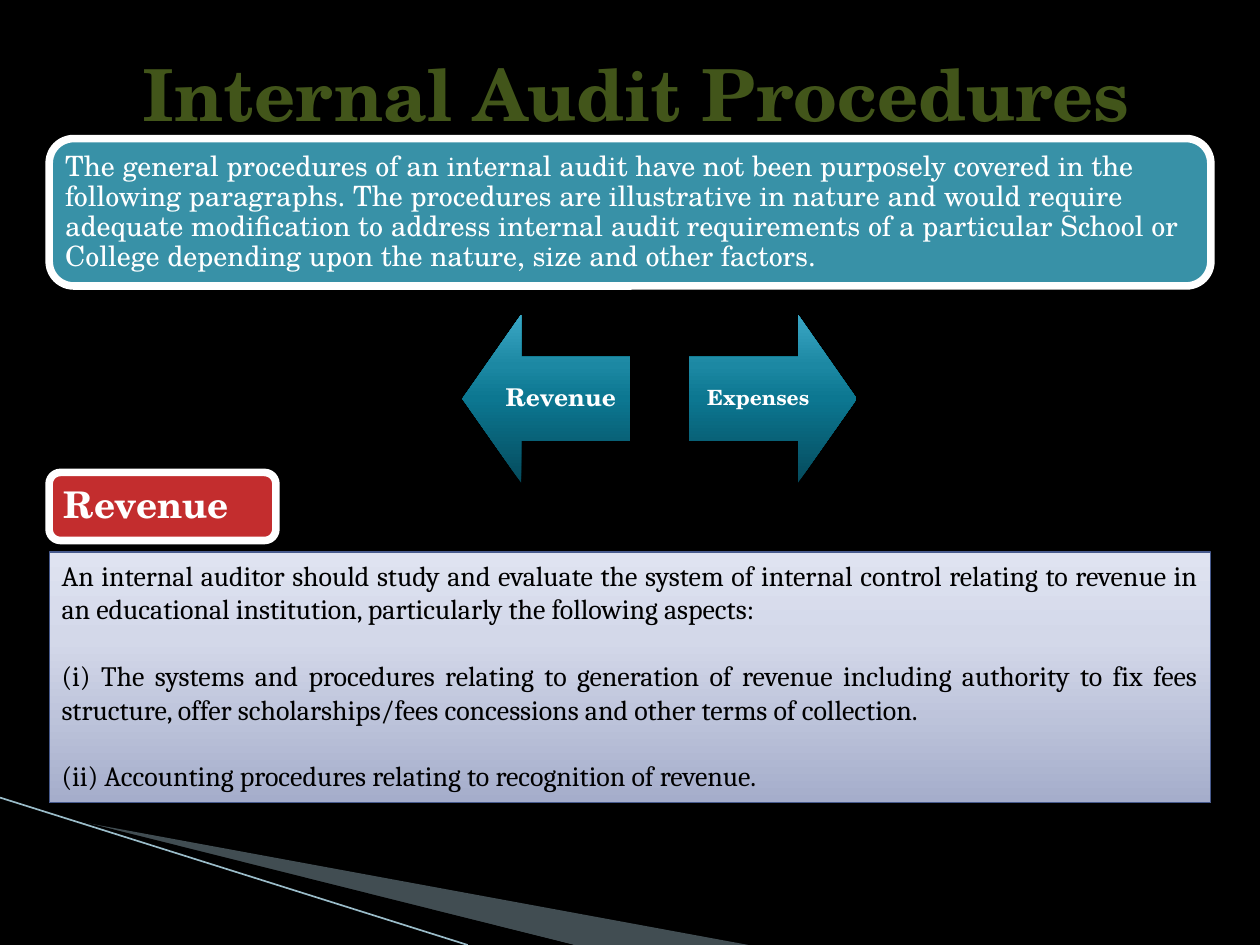
import copy
import pptx
import pptx.util
import pptx.dml.color
import pptx.enum.shapes
import pptx.enum.text
import pptx.oxml

HEX = {
    "back": "000000", "white": "FFFFFF", "title": "42551A", "teal": "3891A7",
    "red": "C32D2E", "edge": "475A8D", "wedge": "A3C2CE", "line": "9ABCC9",
}
BLUE = [(0, "054B5D"), (50, "0C7791"), (70, "1C88A3"), (100, "3AA6C5")]
PALE = [(0, "A5ADCB"), (65, "D3D8E9"), (100, "DFE3F1")]
SERIF = "TeX Gyre Schola"
COLS, ROWS = 100, 75
LEFT, WIDE = 3.9, 92.2
KIND = pptx.enum.shapes.MSO_SHAPE
SIDE = pptx.enum.text.PP_ALIGN
MID = pptx.enum.text.MSO_ANCHOR.MIDDLE

deck = pptx.Presentation()
deck.slide_width = pptx.util.Inches(10)
deck.slide_height = pptx.util.Inches(7.5)
CELL = deck.slide_width / COLS


def grid(*nums):
    return [round(num * CELL) for num in nums]


def rgb(name):
    return pptx.dml.color.RGBColor.from_string(HEX.get(name, name))


def paint(shape, fill):
    shape.shadow.inherit = False
    shape.fill.solid()
    shape.fill.fore_color.rgb = rgb(fill)


def blend(shape, stops):
    shape.shadow.inherit = False
    shape.fill.gradient()
    shape.fill.gradient_angle = 90
    first = shape.fill.gradient_stops[0]._gs
    bag = first.getparent()
    for node in list(bag):
        bag.remove(node)
    for _ in stops:
        bag.append(copy.deepcopy(first))
    for stop, (spot, tone) in zip(shape.fill.gradient_stops, stops):
        stop.position = spot / 100
        stop.color.rgb = rgb(tone)


def edge(shape, name, width):
    shape.line.color.rgb = rgb(name)
    shape.line.width = pptx.util.Pt(width)


def write(para, text, size, tone, bold=False, font=SERIF, side=SIDE.LEFT):
    para.alignment = side
    run = para.add_run()
    run.text = text
    run.font.name = font
    run.font.size = pptx.util.Pt(size)
    run.font.bold = bold
    run.font.color.rgb = rgb(tone)


def label(shape, text, size, pad, bold, side):
    frame = shape.text_frame
    frame.word_wrap = True
    frame.vertical_anchor = MID
    frame.margin_left = frame.margin_right = pptx.util.Inches(pad)
    frame.margin_top = frame.margin_bottom = pptx.util.Inches(pad)
    para = frame.paragraphs[0]
    para.line_spacing = 0.9
    write(para, text, size, "white", bold, side=side)


def decor(slide, x, y, w, h):
    for tone, alpha, points in (
        ("wedge", 40, [(0.11, 0.15), (1.2, 1), (0.92, 1)]),
        ("back", 100, [(0.11, 0.14), (0.92, 1), (0.75, 1)]),
    ):
        spots = [grid(x + w * px, y + h * py) for px, py in points]
        pen = slide.shapes.build_freeform(*spots[0])
        pen.add_line_segments(spots[1:], close=True)
        shape = pen.convert_to_shape()
        paint(shape, tone)
        shape.line.fill.background()
        if alpha < 100:
            color = shape.fill._xPr.solidFill[0]
            node = pptx.oxml.parse_xml(
                '<a:alpha xmlns:a="http://schemas.openxmlformats.org/'
                f'drawingml/2006/main" val="{alpha * 1000}"/>')
            color.append(node)
    line = slide.shapes.add_connector(
        pptx.enum.shapes.MSO_CONNECTOR.STRAIGHT,
        *grid(x, y, x + w * 0.75, y + h))
    edge(line, "line", 0.95)
    line._element.spPr.append(pptx.oxml.parse_xml(
        '<a:effectLst xmlns:a="http://schemas.openxmlformats.org/'
        'drawingml/2006/main"/>'))


def head(slide, *box):
    title = slide.shapes.title
    title.left, title.top, title.width, title.height = grid(*box)
    title.text_frame.vertical_anchor = MID
    write(title.text_frame.paragraphs[0], "Internal Audit Procedures",
          41, "title", True, side=SIDE.CENTER)


def panel(slide, box, fill, text, size, pad, bold=False):
    shape = slide.shapes.add_shape(KIND.ROUNDED_RECTANGLE, *grid(*box))
    paint(shape, fill)
    edge(shape, "white", 4.33)
    label(shape, text, size, pad, bold, SIDE.LEFT)


def arrows(slide, x, y, w, h):
    for kind, left, text, size, pad in (
        (KIND.LEFT_ARROW, x, "Revenue", 14, 0.11),
        (KIND.RIGHT_ARROW, x + w - h, "Expenses", 12, 0.09),
    ):
        shape = slide.shapes.add_shape(kind, *grid(left, y, h, h))
        shape.adjustments[0] = 0.5
        shape.adjustments[1] = 0.35
        blend(shape, BLUE)
        shape.line.fill.background()
        label(shape, text, size, pad, True, SIDE.CENTER)


def body(slide, *box):
    shape = slide.shapes.add_shape(KIND.RECTANGLE, *grid(*box))
    blend(shape, PALE)
    edge(shape, "edge", 0.75)
    frame = shape.text_frame
    frame.word_wrap = True
    frame.vertical_anchor = pptx.enum.text.MSO_ANCHOR.TOP
    texts = (
        "An internal auditor should study and evaluate the system of internal "
        "control relating to revenue in an educational institution, "
        "particularly the following aspects:",
        "(i) The systems and procedures relating to generation of revenue "
        "including authority to fix fees structure, offer scholarships/fees "
        "concessions and other terms of collection.",
        "(ii) Accounting procedures relating to recognition of revenue.",
    )
    for rank, text in enumerate(texts):
        para = frame.add_paragraph() if rank else frame.paragraphs[0]
        if rank:
            para.space_before = pptx.util.Pt(19)
        write(para, text, 16, "back", font="Cambria", side=SIDE.JUSTIFY)


def main():
    slide = deck.slides.add_slide(deck.slide_layouts[5])
    slide.background.fill.solid()
    slide.background.fill.fore_color.rgb = rgb("back")
    decor(slide, 0, 63.3, 49.5, 11.7)
    head(slide, 5, 3, 91.1, 8.7)
    panel(slide, (LEFT, 11, WIDE, 11.7), "teal",
          "The general procedures of an internal audit have not been purposely "
          "covered in the following paragraphs. The procedures are "
          "illustrative in nature and would require adequate modification to "
          "address internal audit requirements of a particular School or "
          "College depending upon the nature, size and other factors.",
          16, 0.07)
    arrows(slide, 36.7, 25, 31.3, 13.3)
    panel(slide, (LEFT, 37.5, 18, 5.4), "red", "Revenue", 21, 0.09, True)
    body(slide, LEFT, 43.8, WIDE, 19.9)
    deck.save("out.pptx")


if __name__ == "__main__":
    main()
